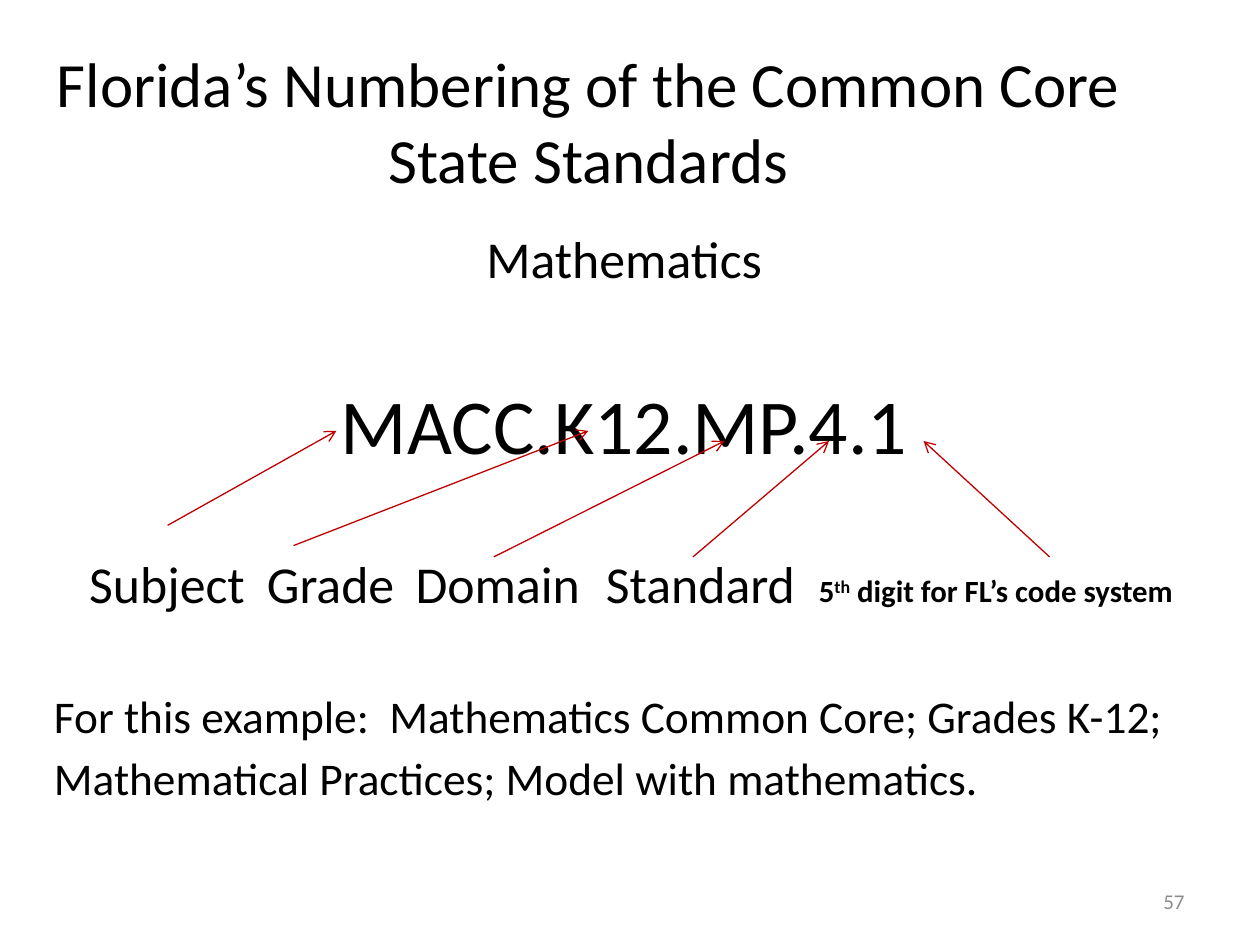
import pptx
import pptx.util
import pptx.dml.color
import pptx.enum.shapes
import pptx.enum.text
import pptx.oxml.ns
import lxml.etree

Inches = pptx.util.Inches
Pt = pptx.util.Pt
PP_ALIGN = pptx.enum.text.PP_ALIGN
MSO_ANCHOR = pptx.enum.text.MSO_ANCHOR
qn = pptx.oxml.ns.qn

BLACK = pptx.dml.color.RGBColor(0x00, 0x00, 0x00)
GRAY = pptx.dml.color.RGBColor(0x8C, 0x8C, 0x8C)
RED = pptx.dml.color.RGBColor(0xC0, 0x00, 0x00)


def add_box(left, top, width, height, anchor=MSO_ANCHOR.TOP):
    sp = s.shapes.add_textbox(Inches(left), Inches(top), Inches(width), Inches(height))
    tf = sp.text_frame
    tf.word_wrap = True
    tf.vertical_anchor = anchor
    return tf


def add_text(p, text, size=29.6, color=BLACK, bold=False, align=None, before=None, baseline=None):
    if align is not None:
        p.alignment = align
    if before is not None:
        p.space_before = Pt(before)
    r = p.add_run()
    r.text = text
    r.font.name = "Calibri"
    r.font.size = Pt(size)
    r.font.bold = bold
    r.font.color.rgb = color
    if baseline:
        r.font._element.set("baseline", str(baseline * 1000))


prs = pptx.Presentation()
prs.slide_width = Inches(10)
prs.slide_height = Inches(7.5)
s = prs.slides.add_slide(prs.slide_layouts[6])

tf = add_box(0.17, 0.33, 9, 1.25, MSO_ANCHOR.MIDDLE)
add_text(tf.paragraphs[0], "Florida’s Numbering of the Common Core State Standards",
         size=36, align=PP_ALIGN.CENTER)

tf = add_box(0.33, 1.75, 9.25, 4.58)
add_text(tf.paragraphs[0], "Mathematics", align=PP_ALIGN.CENTER)
add_text(tf.add_paragraph(), "MACC.K12.MP.4.1", size=44.4, align=PP_ALIGN.CENTER, before=50)
add_text(tf.add_paragraph(), "For this example:  Mathematics Common Core; Grades K-12;",
         size=25.9, before=125)
add_text(tf.add_paragraph(), "Mathematical Practices; Model with mathematics.",
         size=25.9, before=4.4)

labels = [("Subject", 0.61), ("Grade", 2.02), ("Domain", 3.2), ("Standard", 4.71)]
for label, left in labels:
    tf = add_box(left, 4.33, 1.8, 0.6)
    add_text(tf.paragraphs[0], label)

p = add_box(6.4, 4.49, 3.2, 0.4).paragraphs[0]
add_text(p, "5", size=17.6, bold=True)
add_text(p, "th", size=17.6, bold=True, baseline=30)
add_text(p, " digit for FL’s code system", size=17.6, bold=True)

arrows = [
    (1.33, 4.17, 2.67, 3.42),
    (2.33, 4.33, 4.67, 3.42),
    (3.92, 4.42, 5.75, 3.5),
    (5.5, 4.42, 6.58, 3.5),
    (8.33, 4.42, 7.33, 3.5),
]
for arrow in arrows:
    sp = s.shapes.add_connector(pptx.enum.shapes.MSO_CONNECTOR.STRAIGHT, *map(Inches, arrow))
    sp.line.color.rgb = RED
    sp.line.width = Pt(0.75)
    lxml.etree.SubElement(sp.line._get_or_add_ln(), qn("a:tailEnd"), type="arrow")
    lxml.etree.SubElement(sp._element.spPr, qn("a:effectLst"))

tf = add_box(7.17, 6.95, 2.33, 0.4, MSO_ANCHOR.MIDDLE)
add_text(tf.paragraphs[0], "57", size=12, color=GRAY, align=PP_ALIGN.RIGHT)

prs.save("out.pptx")
